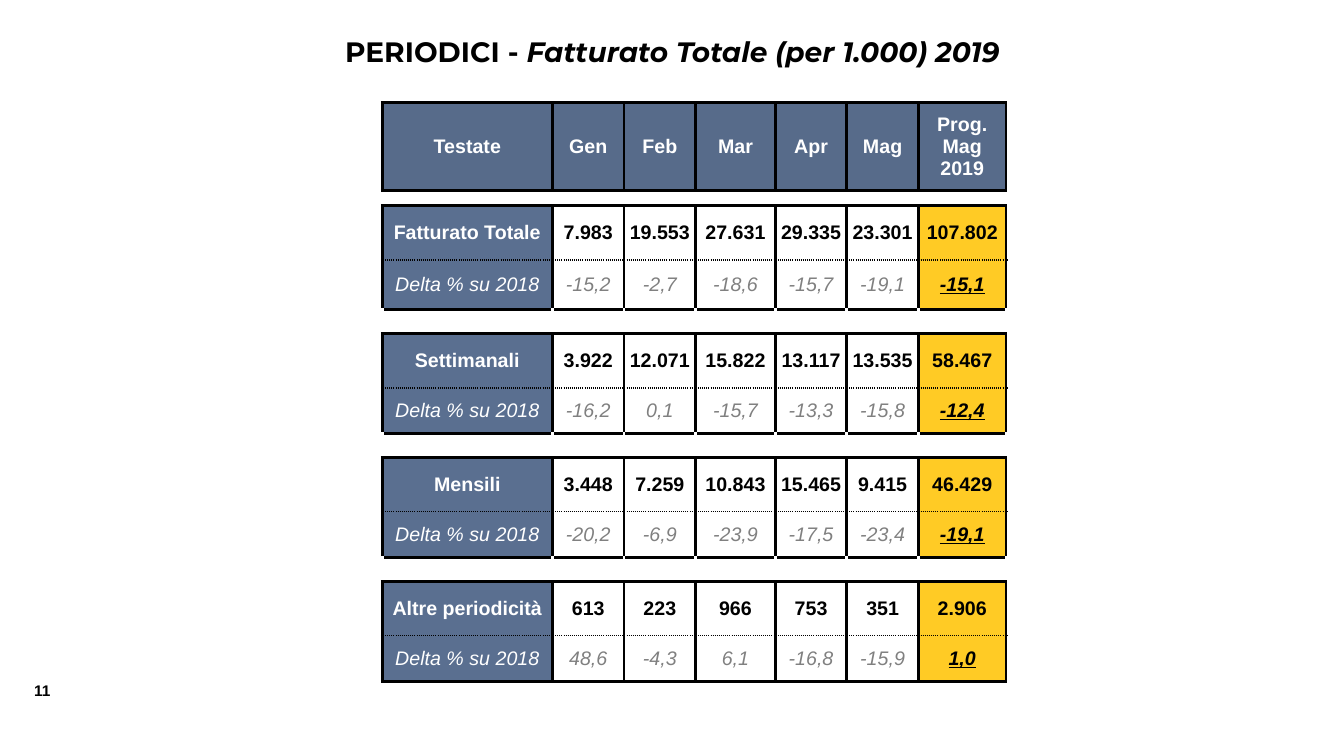
from dataclasses import dataclass

from lxml import etree
from pptx import Presentation
from pptx.dml.color import RGBColor
from pptx.enum.text import MSO_ANCHOR, MSO_AUTO_SIZE, PP_ALIGN
from pptx.oxml.ns import qn
from pptx.util import Inches, Pt

CENTER, LEFT = PP_ALIGN.CENTER, PP_ALIGN.LEFT
MIDDLE = MSO_ANCHOR.MIDDLE
GROW = MSO_AUTO_SIZE.SHAPE_TO_FIT_TEXT

BLACK, WHITE, GREY = "000000", "FFFFFF", "808080"
HEADER_BLUE, LABEL_BLUE, YELLOW = "576B8A", "5A6F90", "FFCB25"


@dataclass(frozen=True)
class Style:
    color: str = BLACK
    size: float = 14
    font: str = "Arial"
    bold: bool = True
    italic: bool = False
    underline: bool = False


@dataclass(frozen=True)
class Edge:
    color: str = BLACK
    width: float = 2.25
    dash: str = "solid"


@dataclass(frozen=True)
class Borders:
    left: Edge | None = Edge()
    right: Edge | None = Edge()
    top: Edge | None = Edge()
    bottom: Edge | None = Edge()


@dataclass(frozen=True)
class Group:
    name: str
    values: str
    deltas: str
    gap: float
    delta_height: float


DOTTED, WHITE_EDGE = Edge(width=1, dash="sysDot"), Edge(WHITE)
BOXED = Borders()
VALUE_BORDERS = Borders(bottom=DOTTED)
DELTA_BORDERS = Borders(top=DOTTED)
FIRST_GAP_BORDERS = Borders(left=None, right=None)
GAP_BORDERS = Borders(left=WHITE_EDGE, right=WHITE_EDGE)

TITLE = Style(size=20, font="Montserrat")
TITLE_ITALIC = Style(size=20, font="Montserrat", italic=True)
PAGE_NUMBER = Style(size=11)
LABEL = Style(WHITE)
VALUE = Style()
DELTA_LABEL = Style(WHITE, bold=False, italic=True)
DELTA = Style(GREY, bold=False, italic=True)
DELTA_TOTAL = Style(italic=True, underline=True)

HEADERS = ["Testate", "Gen", "Feb", "Mar", "Apr", "Mag", "Prog.\nMag\n2019"]
COL_WIDTHS = [1.69, 0.71, 0.71, 0.79, 0.71, 0.71, 0.87]
HEADER_HEIGHT, VALUE_HEIGHT = 0.87, 0.54
GROUPS = [
    Group("Fatturato Totale", "7.983 19.553 27.631 29.335 23.301 107.802",
          "-15,2 -2,7 -18,6 -15,7 -19,1 -15,1", 0.15, 0.49),
    Group("Settimanali", "3.922 12.071 15.822 13.117 13.535 58.467",
          "-16,2 0,1 -15,7 -13,3 -15,8 -12,4", 0.24, 0.45),
    Group("Mensili", "3.448 7.259 10.843 15.465 9.415 46.429",
          "-20,2 -6,9 -23,9 -17,5 -23,4 -19,1", 0.24, 0.45),
    Group("Altre periodicità", "613 223 966 753 351 2.906",
          "48,6 -4,3 6,1 -16,8 -15,9 1,0", 0.24, 0.45),
]


def rgb(color: str) -> RGBColor:
    return RGBColor.from_string(color)


def add_run(p, text: str, style: Style) -> None:
    r = p.add_run()
    r.text = text
    f = r.font
    f.name, f.size = style.font, Pt(style.size)
    f.bold, f.italic, f.underline = style.bold, style.italic, style.underline
    f.color.rgb = rgb(style.color)


def add_text(s, box: tuple, runs: list, align, wrap: bool) -> None:
    tf = s.shapes.add_textbox(*map(Inches, box)).text_frame
    tf.word_wrap, tf.auto_size = wrap, GROW
    p = tf.paragraphs[0]
    p.alignment = align
    for text, style in runs:
        add_run(p, text, style)


def set_borders(cell, borders: Borders) -> None:
    tc_pr = cell._tc.get_or_add_tcPr()
    edges = {"a:lnL": borders.left, "a:lnR": borders.right,
             "a:lnT": borders.top, "a:lnB": borders.bottom}
    for tag, edge in edges.items():
        ln = etree.SubElement(tc_pr, qn(tag))
        if edge is None:
            etree.SubElement(ln, qn("a:noFill"))
            continue
        ln.set("w", str(Pt(edge.width)))
        fill = etree.SubElement(ln, qn("a:solidFill"))
        etree.SubElement(fill, qn("a:srgbClr"), val=edge.color)
        etree.SubElement(ln, qn("a:prstDash"), val=edge.dash)


def fill_cell(cell, text: str, style: Style, fill: str, borders: Borders,
              margin: float = 0) -> None:
    set_borders(cell, borders)
    cell.fill.solid()
    cell.fill.fore_color.rgb = rgb(fill)
    cell.vertical_anchor = MIDDLE
    cell.margin_left = cell.margin_right = Inches(margin)
    cell.margin_top = cell.margin_bottom = Inches(margin / 2)
    p = cell.text_frame.paragraphs[0]
    p.alignment = CENTER
    if not text:
        # A small end mark keeps the empty row low
        etree.SubElement(p._p, qn("a:endParaRPr"), sz="600")
    for i, line in enumerate(text.split("\n") if text else []):
        if i:
            p.add_line_break()
        add_run(p, line, style)


def fill_data_row(row, label: str, values: list, label_style: Style,
                  style: Style, total_style: Style, borders: Borders) -> None:
    first, *months, total = row.cells
    fill_cell(first, label, label_style, LABEL_BLUE, borders, 0.08)
    for cell, value in zip(months, values):
        fill_cell(cell, value, style, WHITE, borders)
    fill_cell(total, values[-1], total_style, YELLOW, borders)


def add_revenue_table(s) -> None:
    heights = [HEADER_HEIGHT]
    for g in GROUPS:
        heights += [g.gap, VALUE_HEIGHT, g.delta_height]
    table = s.shapes.add_table(
        len(heights), len(COL_WIDTHS), Inches(3.79), Inches(1.02),
        Inches(sum(COL_WIDTHS)), Inches(sum(heights))).table
    table.first_row = table.horz_banding = False
    for col, width in zip(table.columns, COL_WIDTHS):
        col.width = Inches(width)
    rows = list(table.rows)
    for row, height in zip(rows, heights):
        row.height = Inches(height)

    for cell, text in zip(rows[0].cells, HEADERS):
        fill_cell(cell, text, LABEL, HEADER_BLUE, BOXED, 0.1)
    for i, g in enumerate(GROUPS):
        gap, value_row, delta_row = rows[1 + 3 * i:4 + 3 * i]
        for cell in gap.cells:
            fill_cell(cell, "", VALUE, WHITE, GAP_BORDERS if i else FIRST_GAP_BORDERS)
        fill_data_row(value_row, g.name, g.values.split(),
                      LABEL, VALUE, VALUE, VALUE_BORDERS)
        fill_data_row(delta_row, "Delta % su 2018", g.deltas.split(),
                      DELTA_LABEL, DELTA, DELTA_TOTAL, DELTA_BORDERS)


def main() -> None:
    prs = Presentation()
    prs.slide_width, prs.slide_height = Inches(13.33), Inches(7.5)
    s = prs.slides.add_slide(prs.slide_layouts[6])

    # Page number and title
    add_text(s, (0.24, 6.71, 0.42, 0.29), [("11", PAGE_NUMBER)], LEFT, False)
    add_text(s, (1.67, 0.29, 10, 0.44),
             [("PERIODICI - ", TITLE),
              ("Fatturato Totale (per 1.000) 2019", TITLE_ITALIC)], CENTER, True)

    # Revenue by periodicity and month
    add_revenue_table(s)
    prs.save("out.pptx")


if __name__ == "__main__":
    main()
